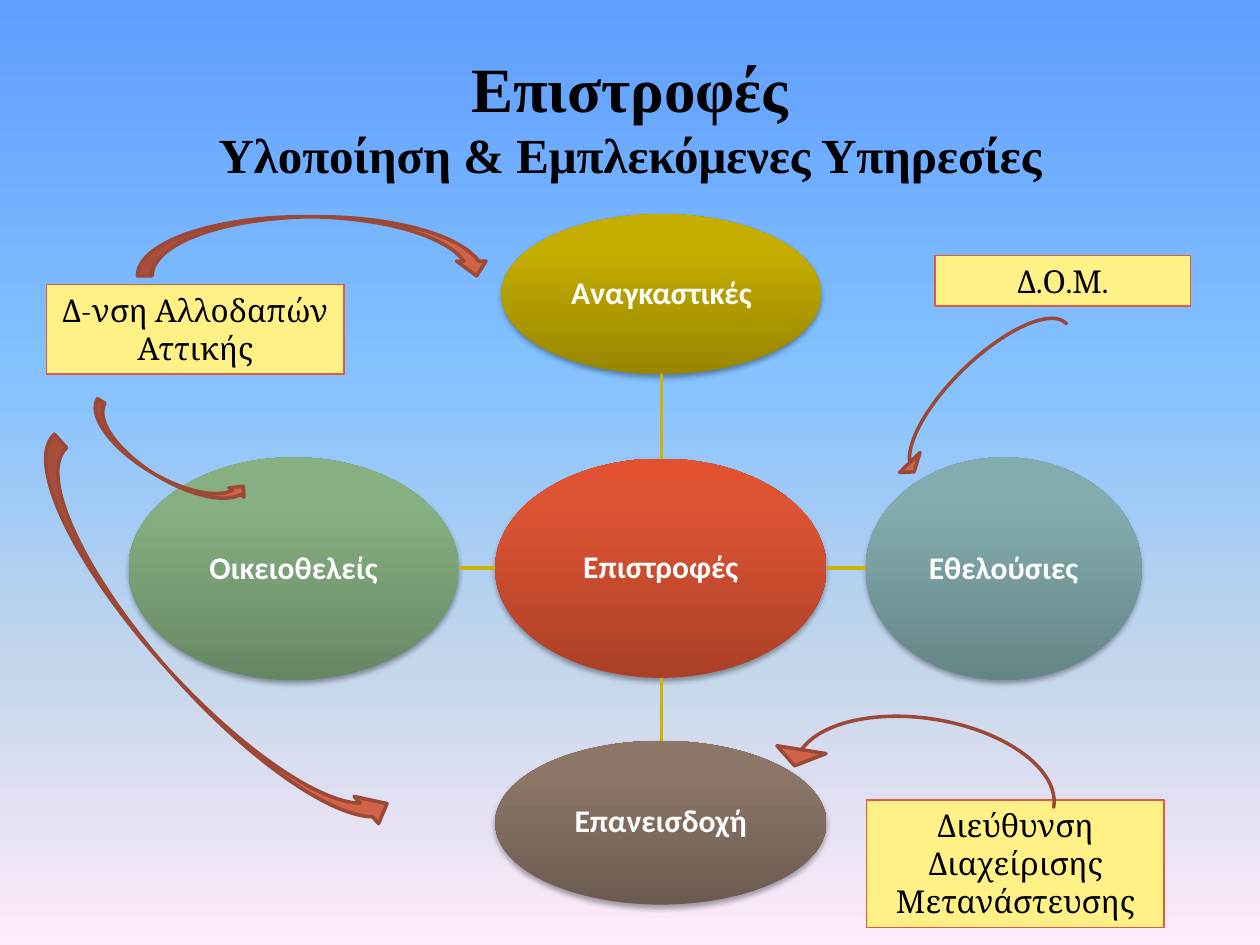
"""Build the slide on types of returns and the services involved."""
from typing import NamedTuple

from lxml import etree
from pptx import Presentation
from pptx.dml.color import RGBColor
from pptx.enum.shapes import MSO_CONNECTOR, MSO_SHAPE
from pptx.enum.text import MSO_ANCHOR, MSO_AUTO_SIZE, PP_ALIGN
from pptx.oxml.ns import qn
from pptx.util import Inches, Pt

ELLIPSE, RECT = MSO_SHAPE.OVAL, MSO_SHAPE.RECTANGLE
CURVED_UP, CURVED_DOWN = MSO_SHAPE.CURVED_UP_ARROW, MSO_SHAPE.CURVED_DOWN_ARROW
STRAIGHT = MSO_CONNECTOR.STRAIGHT
CENTER, TOP, MIDDLE = PP_ALIGN.CENTER, MSO_ANCHOR.TOP, MSO_ANCHOR.MIDDLE
FIT_SHAPE = MSO_AUTO_SIZE.SHAPE_TO_FIT_TEXT

BLACK = RGBColor(0x00, 0x00, 0x00)
WHITE = RGBColor(0xFF, 0xFF, 0xFF)
GOLD = RGBColor(0xCC, 0xB4, 0x00)
YELLOW = RGBColor(0xFF, 0xF1, 0x85)
ORANGE = RGBColor(0xDF, 0x5B, 0x3B)
RUST = RGBColor(0xD1, 0x63, 0x49)
BROWN = RGBColor(0x9B, 0x49, 0x36)
SKY = [(0, RGBColor(0x5E, 0x9E, 0xFF)), (40, RGBColor(0x85, 0xC2, 0xFF)),
       (70, RGBColor(0xC4, 0xD6, 0xEB)), (100, RGBColor(0xFF, 0xEB, 0xFA))]
RED_TONES = (RGBColor(0xAB, 0x40, 0x27), RGBColor(0xDE, 0x54, 0x33), RGBColor(0xE3, 0x52, 0x30))
GOLD_TONES = (RGBColor(0x98, 0x86, 0x00), RGBColor(0xC6, 0xAE, 0x00), RGBColor(0xC7, 0xAF, 0x00))
TEAL_TONES = (RGBColor(0x65, 0x85, 0x86), RGBColor(0x83, 0xAC, 0xAE), RGBColor(0x82, 0xAE, 0xAF))
TAUPE_TONES = (RGBColor(0x6C, 0x5B, 0x50), RGBColor(0x8C, 0x76, 0x68), RGBColor(0x8D, 0x77, 0x68))
GREEN_TONES = (RGBColor(0x67, 0x87, 0x64), RGBColor(0x86, 0xB0, 0x82), RGBColor(0x86, 0xB1, 0x82))


class Box(NamedTuple):
    left: float
    top: float
    width: float
    height: float


class Node(NamedTuple):
    text: str
    box: Box
    tones: tuple


class Label(NamedTuple):
    text: str
    box: Box


class Arrow(NamedTuple):
    kind: int
    box: Box
    rotation: float = 0
    adjustments: tuple = (0.25, 0.5, 0.25)


NODES = [
    Node("Επιστροφές", Box(3.93, 3.64, 2.63, 1.74), RED_TONES),
    Node("Αναγκαστικές", Box(3.98, 1.7, 2.54, 1.27), GOLD_TONES),
    Node("Εθελούσιες", Box(6.87, 3.63, 2.19, 1.77), TEAL_TONES),
    Node("Επανεισδοχή", Box(3.93, 5.88, 2.63, 1.3), TAUPE_TONES),
    Node("Οικειοθελείς", Box(1.02, 3.63, 2.62, 1.77), GREEN_TONES),
]
LINKS = [(5.25, 3.64, 5.25, 2.97), (6.56, 4.51, 6.87, 4.51),
         (5.25, 5.38, 5.25, 5.88), (3.93, 4.51, 3.64, 4.51)]
THIN = (0, 0.73, 0.25)
ANNOTATIONS = [
    Label("Δ-νση Αλλοδαπών Αττικής", Box(0.37, 2.26, 2.36, 0.71)),
    Arrow(CURVED_DOWN, Box(1.09, 1.72, 2.81, 0.47)),
    Arrow(CURVED_UP, Box(0.6, 3.51, 1.42, 0.28), 31),
    Arrow(CURVED_UP, Box(-0.46, 4.87, 4.09, 0.58), 48, (0.25, 0.5, 0.27)),
    Label("Διεύθυνση Διαχείρισης Μετανάστευσης", Box(6.88, 6.35, 2.36, 1.01)),
    Arrow(CURVED_UP, Box(6.14, 5.69, 2.28, 0.54), 189.1, THIN),
    Label("Δ.Ο.Μ.", Box(7.42, 2.03, 2.03, 0.4)),
    Arrow(CURVED_UP, Box(6.81, 2.93, 1.8, 0.31), 135.7, THIN),
]


def set_gradient(owner, fill, stops: list, angle: float) -> None:
    fill.gradient()
    fill.gradient_angle = angle
    gs_list = next(owner.element.iter(qn("a:gsLst")))
    for gs in list(gs_list):
        gs_list.remove(gs)
    for percent, color in stops:
        gs = etree.SubElement(gs_list, qn("a:gs"), pos=str(percent * 1000))
        etree.SubElement(gs, qn("a:srgbClr"), val=str(color))


def add_run(p, text: str, size: float, font: str, color: RGBColor, bold: bool) -> None:
    r = p.add_run()
    r.text = text
    r.font.size, r.font.name, r.font.bold = Pt(size), font, bold
    r.font.color.rgb = color


def add_shape(slide, kind: int, box: Box):
    sp = slide.shapes.add_shape(kind, *map(Inches, box))
    sp.shadow.inherit = False
    return sp


def set_solid(sp, fill: RGBColor, line: RGBColor, width: float) -> None:
    sp.fill.solid()
    sp.fill.fore_color.rgb = fill
    sp.line.color.rgb = line
    sp.line.width = Pt(width)


def add_node(slide, node: Node) -> None:
    sp = add_shape(slide, ELLIPSE, node.box)
    set_gradient(sp, sp.fill, list(zip((0, 80, 100), node.tones)), 90)
    sp.line.fill.background()
    effects = next(sp.element.iter(qn("a:effectLst")))
    shadow = etree.SubElement(effects, qn("a:outerShdw"), blurRad=str(Pt(3.1)),
                              dist=str(Pt(1.8)), dir="5400000", rotWithShape="0")
    color = etree.SubElement(shadow, qn("a:srgbClr"), val=str(BLACK))
    etree.SubElement(color, qn("a:alpha"), val="35000")
    tf = sp.text_frame
    tf.margin_left = tf.margin_right = tf.margin_top = tf.margin_bottom = Inches(0.01)
    tf.vertical_anchor = MIDDLE
    p = tf.paragraphs[0]
    p.alignment, p.line_spacing = CENTER, 0.9
    add_run(p, node.text, 18, "Calibri", WHITE, True)


def add_link(slide, ends: tuple) -> None:
    link = slide.shapes.add_connector(STRAIGHT, *map(Inches, ends))
    link.line.color.rgb = GOLD
    link.line.width = Pt(2)
    etree.SubElement(link.element.spPr, qn("a:effectLst"))


def add_label(slide, label: Label) -> None:
    sp = add_shape(slide, RECT, label.box)
    set_solid(sp, YELLOW, ORANGE, 0.75)
    tf = sp.text_frame
    tf.word_wrap, tf.auto_size, tf.vertical_anchor = True, FIT_SHAPE, TOP
    p = tf.paragraphs[0]
    p.alignment = CENTER
    add_run(p, label.text, 18, "Cambria", BLACK, False)


def add_arrow(slide, arrow: Arrow) -> None:
    sp = add_shape(slide, arrow.kind, arrow.box)
    set_solid(sp, RUST, BROWN, 2)
    sp.rotation = arrow.rotation
    for i, value in enumerate(arrow.adjustments):
        sp.adjustments[i] = value


def add_title(slide) -> None:
    title = slide.shapes.title
    title.left, title.top, title.width, title.height = map(Inches, (0.5, 0.3, 9, 1.25))
    title.text_frame.vertical_anchor = MIDDLE
    p = title.text_frame.paragraphs[0]
    p.alignment = CENTER
    add_run(p, "Επιστροφές", 36, "Times New Roman", BLACK, True)
    p.add_line_break()
    add_run(p, "Υλοποίηση & Εμπλεκόμενες Υπηρεσίες", 28, "Times New Roman", BLACK, True)


def main() -> None:
    prs = Presentation()
    prs.slide_width, prs.slide_height = Inches(10), Inches(7.5)
    slide = prs.slides.add_slide(prs.slide_layouts[5])
    set_gradient(slide, slide.background.fill, SKY, 270)
    add_title(slide)
    for node in NODES:
        add_node(slide, node)
    for ends in LINKS:
        add_link(slide, ends)
    for item in ANNOTATIONS:
        if isinstance(item, Label):
            add_label(slide, item)
        else:
            add_arrow(slide, item)
    prs.save("out.pptx")


if __name__ == "__main__":
    main()
